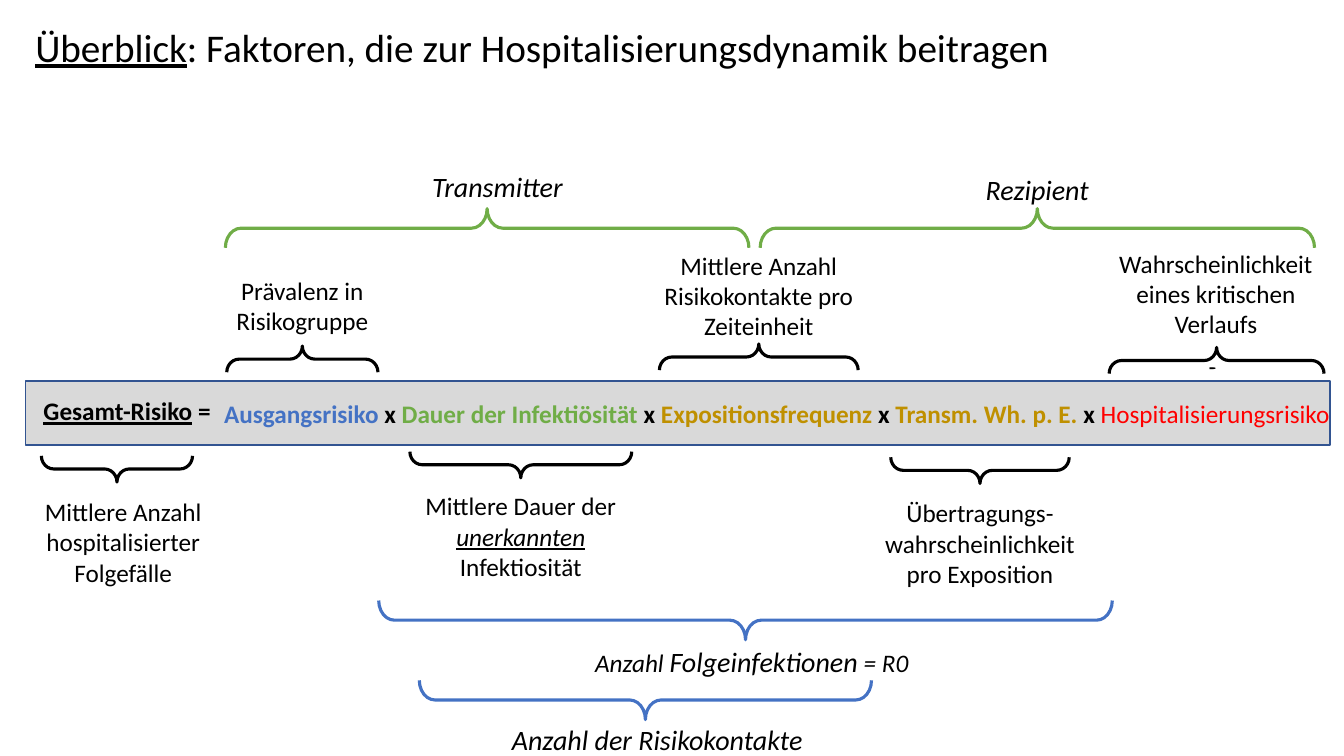
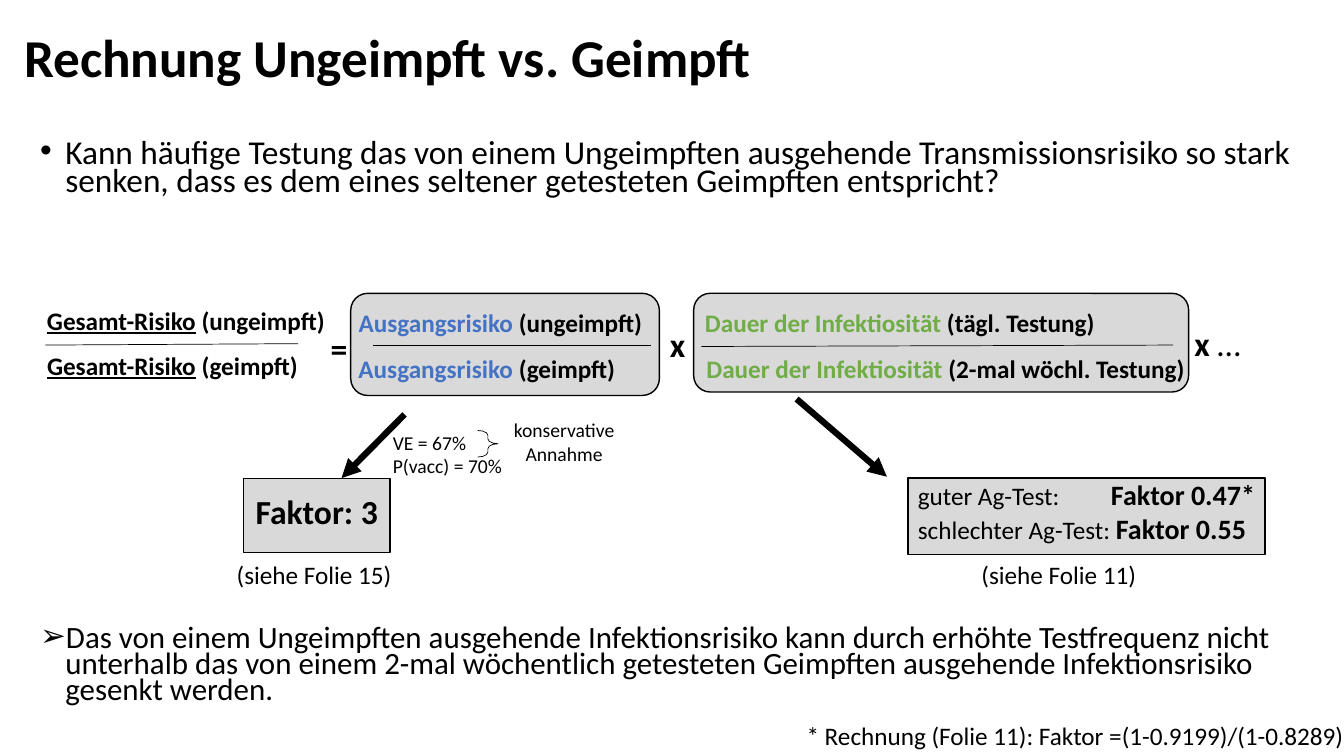
from lxml import etree
from pptx import Presentation
from pptx import util as u
from pptx.dml.color import RGBColor
from pptx.enum import shapes as es, text as et
from pptx.oxml.ns import qn

BLACK = RGBColor(0x00, 0x00, 0x00)
GREY = RGBColor(0xD9, 0xD9, 0xD9)
NAVY = RGBColor(0x32, 0x54, 0x91)
BLUE = RGBColor(0x44, 0x72, 0xC4)
GREEN = RGBColor(0x70, 0xAD, 0x47)
GOLD = RGBColor(0xBF, 0x90, 0x00)
RED = RGBColor(0xFF, 0x00, 0x00)

FONT = "Calibri"
LEFT, MID = et.PP_ALIGN.LEFT, et.PP_ALIGN.CENTER
UP, DOWN, SIDE = 270, 90, 0  # where the tip of a brace points


class Deck:
    """Shared style plus the current slide; all lengths in points."""

    def __init__(self):
        self.prs = Presentation()
        self.prs.slide_width, self.prs.slide_height = u.Pt(960), u.Pt(540)
        self.slide = None

    def open(self, layout, box, runs, size):
        """Start a slide and set its title."""
        self.slide = self.prs.slides.add_slide(self.prs.slide_layouts[layout])
        frame = self.hold(self.slide.shapes.title, box)
        frame.vertical_anchor = et.MSO_ANCHOR.MIDDLE
        self.fill(frame.paragraphs[0], runs, size)
        frame.paragraphs[0].line_spacing = 0.9

    def hold(self, item, box):
        """Move a placeholder and return its text frame."""
        item.left, item.top, item.width, item.height = map(u.Pt, box)
        item.text_frame.auto_size = et.MSO_AUTO_SIZE.NONE
        item.text_frame.word_wrap = True
        return item.text_frame

    def fill(self, para, runs, size, align=LEFT):
        """Runs are (text, flags, colour, size); flags are b, i, u."""
        para.alignment = align
        for words, *rest in runs:
            flags, ink, pts = rest + ["", BLACK, size][len(rest):]
            run = para.add_run()
            run.text = words
            font = run.font
            font.name, font.size = FONT, u.Pt(pts)
            font.bold, font.italic = "b" in flags, "i" in flags
            font.underline = "u" in flags
            font.color.rgb = ink

    def text(self, box, *paras, size=18, align=LEFT, wrap=False):
        item = self.slide.shapes.add_textbox(*map(u.Pt, box))
        frame = item.text_frame
        frame.word_wrap = wrap
        for n, runs in enumerate(paras):
            para = frame.add_paragraph() if n else frame.paragraphs[0]
            self.fill(para, runs, size, align)
        return frame

    def list(self, box, items):
        """Items are (bullet, text, size, space before)."""
        frame = self.hold(self.slide.placeholders[1], box)
        for n, (mark, words, size, gap) in enumerate(items):
            para = frame.add_paragraph() if n else frame.paragraphs[0]
            self.fill(para, [(words,)], size)
            para.line_spacing, para.space_before = 0.7, u.Pt(gap)
            props = para._p.get_or_add_pPr()
            props.set("marL", str(u.Pt(18)))
            props.set("indent", str(u.Pt(-18)))
            etree.SubElement(props, qn("a:buFont")).set("typeface", "Arial")
            etree.SubElement(props, qn("a:buChar")).set("char", mark)

    def panel(self, box, line=BLACK, kind=es.MSO_SHAPE.RECTANGLE):
        item = self.slide.shapes.add_shape(kind, *map(u.Pt, box))
        item.shadow.inherit = False
        item.fill.solid()
        item.fill.fore_color.rgb = GREY
        item.line.color.rgb, item.line.width = line, u.Pt(1)

    def brace(self, mid, span, depth, tip, ink=BLACK, curve=0.4, width=2.25):
        """Brace centred on mid, span long, with its tip turned."""
        x, y = mid
        box = (x - depth / 2, y - span / 2, depth, span)
        item = self.slide.shapes.add_shape(
            es.MSO_SHAPE.RIGHT_BRACE, *map(u.Pt, box))
        item.shadow.inherit = False
        item.rotation = tip
        item.adjustments[0] = curve
        item.fill.background()
        item.line.color.rgb, item.line.width = ink, u.Pt(width)
        return item.text_frame

    def line(self, start, end, width=0.5, arrow=False):
        item = self.slide.shapes.add_connector(
            es.MSO_CONNECTOR.STRAIGHT, *map(u.Pt, start + end))
        item.line.color.rgb, item.line.width = BLACK, u.Pt(width)
        props = item._element.spPr
        if arrow:
            tail = etree.SubElement(props.find(qn("a:ln")), qn("a:tailEnd"))
            tail.set("type", "triangle")
        etree.SubElement(props, qn("a:effectLst"))


def factors(d):
    d.open(5, (18, 3.5, 811, 64), [
        ("Überblick", "u"),
        (": Faktoren, die zur Hospitalisierungsdynamik beitragen",)], 28)

    # Formula band
    d.panel((18, 272, 932, 46), NAVY)
    d.text((24, 279, 139, 29), [("Gesamt-Risiko", "bu"), (" =", "b")])
    times = ("x ", "b")
    d.text((153, 281, 808, 29), [
        ("Ausgangsrisiko ", "b", BLUE), times,
        ("Dauer der Infektiösität ", "b", GREEN), times,
        ("Expositionsfrequenz ", "b", GOLD), times,
        ("Transm. Wh. p. E. ", "b", GOLD), times,
        ("Hospitalisierungsrisiko", "", RED)], wrap=True)

    # Meaning of each factor: brace centre, span, tip, text centre, top, runs
    notes = [
        ((83.5, 335), 108, DOWN, 88, 351,
         [("Mittlere Anzahl hospitalisierter Folgefälle",)]),
        ((216, 256.5), 108, UP, 216, 193, [("Prävalenz in Risikogruppe",)]),
        ((372, 332), 158.5, DOWN, 372, 347,
         [("Mittlere Dauer der ",), ("unerkannten", "iu"),
          (" Infektiosität",)]),
        ((542, 255), 142, UP, 542, 175,
         [("Mittlere Anzahl Risikokontakte pro Zeiteinheit",)]),
        ((700, 336), 127.5, DOWN, 700, 352,
         [("Übertragungs-wahrscheinlichkeit pro Exposition",)]),
        ((869, 257.5), 153.5, UP, 868.5, 173.5,
         [("Wahrscheinlichkeit eines kritischen Verlaufs",)]),
    ]
    for mid, span, tip, x, top, runs in notes:
        frame = d.brace(mid, span, 18.7, tip, curve=0.475)
        d.text((x - 76.5, top, 153, 73), runs, align=MID, wrap=True)
    # The last brace carries a small mark
    d.fill(frame.paragraphs[0], [("'",)], 18, MID)

    # Groups of factors
    groups = [
        ((348, 163), 374, UP, GREEN, (301.5, 117.5, 109.5, 32),
         [("Transmitter", "i")]),
        ((741, 163), 396, UP, GREEN, (697, 120, 88.5, 32),
         [("Rezipient", "i")]),
        ((532.5, 443), 524, DOWN, BLUE, (418, 457, 240.5, 32),
         [("Anzahl ", "i", BLACK, 18), ("Folgeinfektionen", "i"),
          (" = R0", "i", BLACK, 18)]),
        ((461, 500), 323, DOWN, BLUE, (358.5, 512.5, 303, 32),
         [("Anzahl der Risikokontakte", "i")]),
    ]
    for mid, span, tip, ink, box, runs in groups:
        d.brace(mid, span, 28, tip, ink)
        d.text(box, runs, size=20)


def ratio(d):
    d.open(1, (10, 8, 828, 70.5),
           [("Rechnung Ungeimpft vs. Geimpft", "b")], 38)
    d.list((21.5, 98, 925, 442), [
        ("•", "Kann häufige Testung das von einem Ungeimpften ausgehende "
         "Transmissionsrisiko so stark senken, dass es dem eines seltener "
         "getesteten Geimpften entspricht?", 23.8, 10),
        ("➢", "Das von einem Ungeimpften ausgehende Infektionsrisiko kann "
         "durch erhöhte Testfrequenz nicht unterhalb das von einem 2-mal "
         "wöchentlich getesteten Geimpften ausgehende Infektionsrisiko "
         "gesenkt werden.", 22.1, 307)])

    # Panels
    for box in ((495.5, 209.5, 353.5, 70.5), (250.5, 209.5, 220.5, 73)):
        d.panel(box, kind=es.MSO_SHAPE.ROUNDED_RECTANGLE)
    for box in ((648.5, 341.5, 255, 54.5), (174, 342, 104.5, 52.5)):
        d.panel(box)

    # Fractions: upper and lower terms with their bars
    terms = [
        (26.5, 214.5, 224, "Gesamt-Risiko", "bu", BLACK, " (ungeimpft)"),
        (26.5, 246.5, 204, "Gesamt-Risiko", "bu", BLACK, " (geimpft)"),
        (249, 216, 220, "Ausgangsrisiko", "b", BLUE, " (ungeimpft)"),
        (249, 248.5, 200, "Ausgangsrisiko", "b", BLUE, " (geimpft)"),
        (496.5, 216, 300, "Dauer der Infektiosität", "b", GREEN,
         " (tägl. Testung)"),
        (497.5, 248.5, 360, "Dauer der Infektiosität", "b", GREEN,
         " (2-mal wöchl. Testung)"),
    ]
    for x, y, wide, name, flags, ink, case in terms:
        d.text((x, y, wide, 29), [(name, flags, ink), (case, "b")])
    for start, end in (((32.5, 246.5), (213, 245.5)),
                       ((266.5, 246.5), (465, 246.5)),
                       ((501, 247.5), (838, 246.5))):
        d.line(start, end)
    d.text((229, 230.5, 26.5, 36), [("=", "b")], size=24)
    d.text((471.5, 228, 26, 36), [("x", "b")], size=24)
    d.text((846, 227, 48, 36), [("x ", "b"), ("…",)], size=24)

    # Arrows to the results
    d.line((289, 296), (244, 341.5), 4.5, True)
    d.line((569, 285), (633.5, 340.5), 4.5, True)

    # Assumptions
    d.text((273.5, 304, 93, 41), [("VE = 67%",)], [("P(vacc) = 70%",)],
           size=14)
    d.brace((348.5, 317), 19, 14.5, SIDE, curve=0.24, width=0.5)
    d.text((345, 295, 116, 41), [("konservative Annahme",)],
           size=14, align=MID, wrap=True)

    # Results
    d.text((175.5, 347, 103, 36), [("Faktor: 3", "b")], size=24)
    tests = d.text(
        (648.5, 337.5, 260, 55.5),
        [("guter Ag-Test:\t",), ("Faktor 0.47*", "b", BLACK, 20)],
        [("schlechter Ag-Test: ",), ("Faktor 0.55", "b", BLACK, 20)],
        wrap=True)
    props = tests.paragraphs[0]._p.get_or_add_pPr()
    stop = etree.SubElement(etree.SubElement(props, qn("a:tabLst")),
                            qn("a:tab"))
    stop.set("pos", str(u.Pt(138)))
    stop.set("algn", "l")
    for x, page in ((162, 15), (694, 11)):
        d.text((x, 396, 127, 29), [(f"(siehe Folie {page})",)])
    d.text((569, 511, 403, 29),
           [("* Rechnung (Folie 11): Faktor =(1-0.9199)/(1-0.8289)",)])


def main():
    deck = Deck()
    factors(deck)
    ratio(deck)
    deck.prs.save("out.pptx")


if __name__ == "__main__":
    main()
